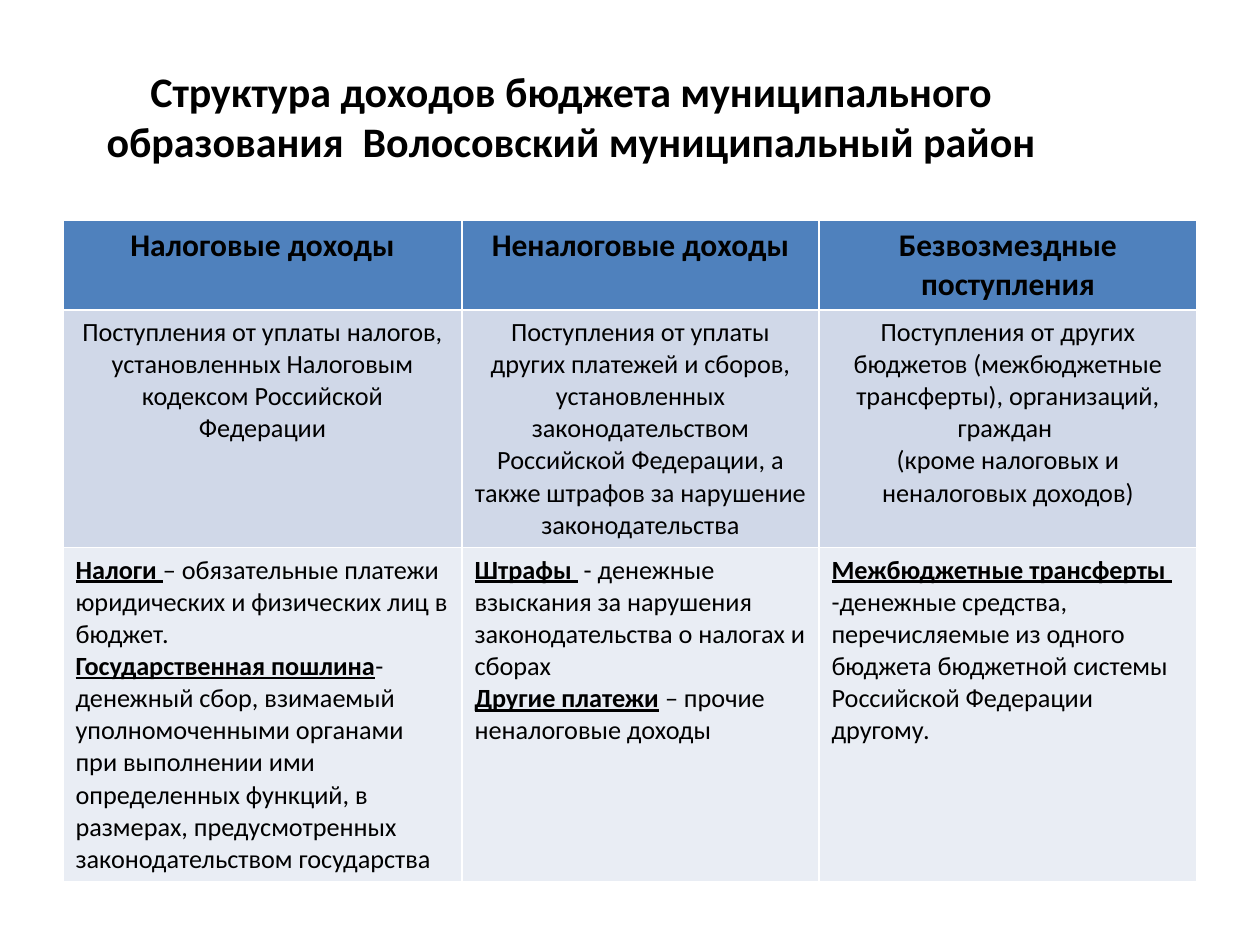
from pptx import Presentation
from pptx.dml.color import RGBColor
from pptx.enum.text import MSO_ANCHOR, PP_ALIGN
from pptx.util import Pt

BLACK = RGBColor(0x00, 0x00, 0x00)
HEADER_BLUE = RGBColor(0x4F, 0x81, 0xBD)
BAND_DARK = RGBColor(0xD0, 0xD8, 0xE8)
BAND_LIGHT = RGBColor(0xE9, 0xED, 0xF4)

TITLE = "Структура доходов бюджета муниципального образования  Волосовский муниципальный район"
COLUMN_WIDTHS = [228, 204, 216]

# Each cell is a list of paragraphs; a paragraph is a list of (term, text) pairs.
HEADERS = [[("", "Налоговые доходы")],
           [("", "Неналоговые доходы")],
           [("", "Безвозмездные поступления")]]
SOURCES = [
    [("", "Поступления от уплаты налогов, установленных Налоговым кодексом Российской Федерации")],
    [("", "Поступления от уплаты других платежей и сборов, установленных законодательством "
          "Российской Федерации, а также штрафов за нарушение законодательства")],
    [("", "Поступления от других бюджетов (межбюджетные трансферты), организаций, граждан "),
     ("", "(кроме налоговых и неналоговых доходов)")],
]
DEFINITIONS = [
    [("Налоги ", "– обязательные платежи юридических и физических лиц в бюджет."),
     ("Государственная пошлина",
      "- денежный сбор, взимаемый уполномоченными органами при выполнении ими определенных "
      "функций, в размерах, предусмотренных  законодательством государства")],
    [("Штрафы ", " - денежные взыскания за нарушения законодательства о налогах и сборах"),
     ("Другие платежи", " – прочие неналоговые доходы")],
    [("Межбюджетные трансферты  ",
      "-денежные средства, перечисляемые из одного бюджета бюджетной системы "
      "Российской Федерации другому.")],
]
# cells, row height, fill, alignment, text format
ROWS = [
    (HEADERS, 51, HEADER_BLUE, PP_ALIGN.CENTER, {"size": Pt(18), "bold": True}),
    (SOURCES, 135, BAND_DARK, PP_ALIGN.CENTER, {"size": Pt(15), "bold": False}),
    (DEFINITIONS, 190, BAND_LIGHT, PP_ALIGN.LEFT, {"size": Pt(15), "bold": False}),
]


def add_run(p, text, **formats):
    r = p.add_run()
    r.text = text
    r.font.name = "Calibri"
    r.font.color.rgb = BLACK
    for name, value in formats.items():
        setattr(r.font, name, value)


prs = Presentation()
prs.slide_width, prs.slide_height = Pt(720), Pt(540)
s = prs.slides.add_slide(prs.slide_layouts[5])

title = s.shapes.title
title.left, title.top, title.width, title.height = Pt(14.4), Pt(21), Pt(624), Pt(90)
tf = title.text_frame
tf.word_wrap = True
tf.vertical_anchor = MSO_ANCHOR.MIDDLE
p = tf.paragraphs[0]
p.alignment = PP_ALIGN.CENTER
add_run(p, TITLE, size=Pt(24), bold=True)

table = s.shapes.add_table(len(ROWS), len(COLUMN_WIDTHS), Pt(36), Pt(126),
                           Pt(sum(COLUMN_WIDTHS)), Pt(sum(row[1] for row in ROWS))).table
for column, width in zip(table.columns, COLUMN_WIDTHS):
    column.width = Pt(width)

for row, (cells, height, fill, alignment, formats) in zip(table.rows, ROWS):
    row.height = Pt(height)
    for cell, paragraphs in zip(row.cells, cells):
        cell.fill.solid()
        cell.fill.fore_color.rgb = fill
        tf = cell.text_frame
        for i, (term, text) in enumerate(paragraphs):
            p = tf.add_paragraph() if i else tf.paragraphs[0]
            p.alignment = alignment
            if term:
                add_run(p, term, **{**formats, "bold": True, "underline": True})
            add_run(p, text, **formats)

prs.save("out.pptx")
